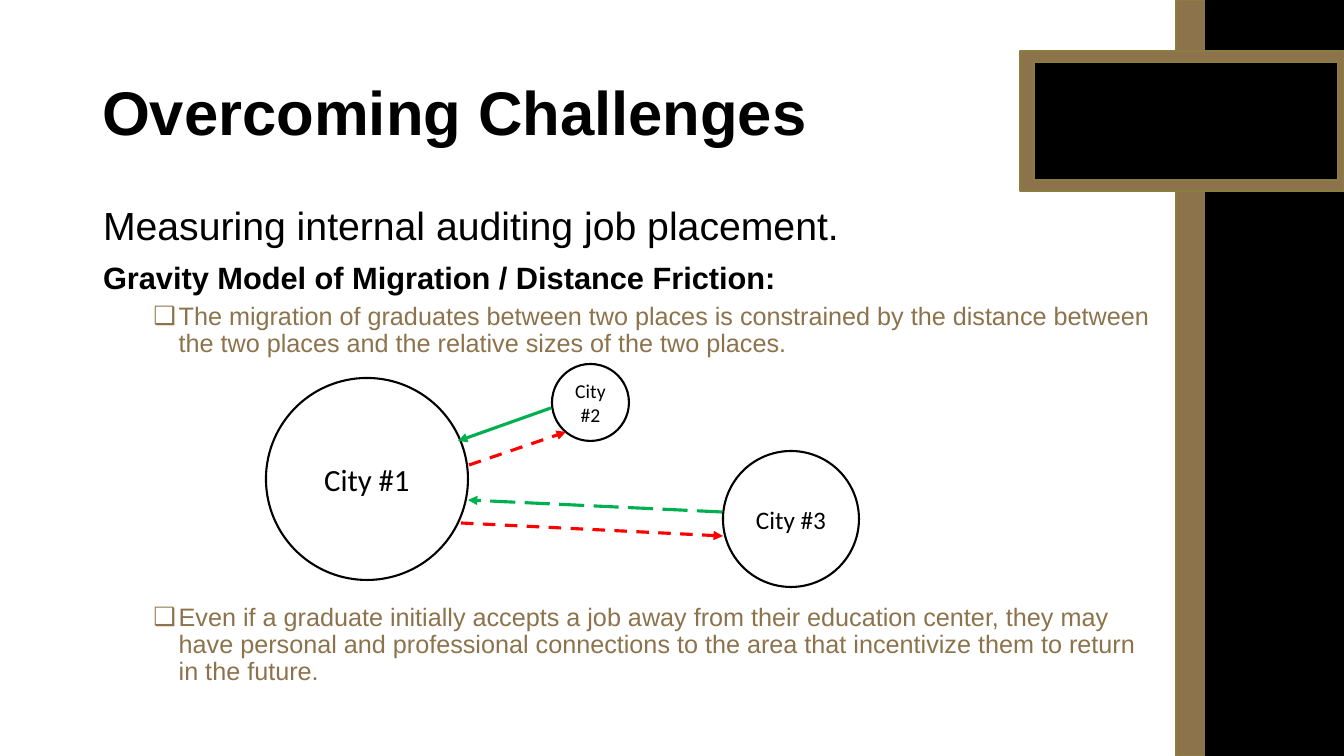
from lxml import etree
from pptx import Presentation
from pptx import util as u
from pptx.dml.color import RGBColor
from pptx.enum import dml, shapes, text
from pptx.oxml.ns import qn

PX = u.Inches(1) / 100.8
BLACK, WHITE, GOLD, OLIVE = "000000", "FFFFFF", "8D734B", "897E3F"
GREEN, RED = "00B050", "FF0000"
SOLID, DASH, LONG_DASH = (
    dml.MSO_LINE.SOLID, dml.MSO_LINE.DASH, dml.MSO_LINE.LONG_DASH)

PANELS = [
    (1176, 0, 30, 756, GOLD, OLIVE),
    (1206, 0, 138, 756, BLACK, BLACK),
    (1020, 51, 324, 140, GOLD, OLIVE),
    (1034, 62, 304, 118, BLACK, OLIVE),
]
HEADINGS = [
    ("Measuring internal auditing job placement.", 28, False, 0),
    ("Gravity Model of Migration / Distance Friction:", 22, True, 10),
]
BULLETS = [
    ("The migration of graduates between two places is constrained by the "
     "distance between the two places and the relative sizes of the two "
     "places.", 5),
    ("Even if a graduate initially accepts a job away from their education "
     "center, they may have personal and professional connections to the "
     "area that incentivize them to return in the future.", 176),
]
CITIES = [
    ("City #1", 0, 14, 202, 22),
    ("City #3", 457, 87, 136, 18),
    ("City #2", 286, 0, 77, 14),
]
FLOWS = [
    (285, 44, 192, 77, GREEN, SOLID),
    (456, 148, 202, 136, GREEN, LONG_DASH),
    (203, 101, 300, 68, RED, DASH),
    (195, 159, 457, 172, RED, DASH),
]


def px(*lengths):
    return [u.Emu(round(length * PX)) for length in lengths]


def color(hex_string):
    return RGBColor.from_string(hex_string)


def set_attributes(target, values):
    for name, value in values.items():
        setattr(target, name, value)


def place(shape, box):
    set_attributes(shape, dict(zip(("left", "top", "width", "height"), px(*box))))


def format_font(font, size, hex_string, name="Arial", bold=False):
    set_attributes(font, {"size": u.Pt(size), "name": name, "bold": bold})
    font.color.rgb = color(hex_string)


def add_filled(slide, kind, box, fill, line, width):
    shape = slide.shapes.add_shape(kind, *px(*box))
    shape.shadow.inherit = False
    shape.fill.solid()
    shape.fill.fore_color.rgb = color(fill)
    shape.line.color.rgb = color(line)
    shape.line.width = u.Pt(width)
    return shape


def add_panels(slide, panels):
    for *box, fill, line in panels:
        add_filled(slide, shapes.MSO_SHAPE.RECTANGLE, box, fill, line, 1)


def fill_title(title, box):
    place(title, box)
    frame = title.text_frame
    set_attributes(frame, {"vertical_anchor": text.MSO_ANCHOR.MIDDLE,
                           "auto_size": text.MSO_AUTO_SIZE.NONE})
    frame.text = "Overcoming Challenges"
    paragraph = frame.paragraphs[0]
    set_attributes(paragraph, {"alignment": text.PP_ALIGN.LEFT,
                               "line_spacing": 0.9})
    format_font(paragraph.font, 44, BLACK, bold=True)


def set_bullet(paragraph, character, margin, indent):
    properties = paragraph._p.get_or_add_pPr()
    properties.set("marL", str(u.Inches(margin)))
    properties.set("indent", str(u.Inches(indent)))
    if character:
        etree.SubElement(properties, qn("a:buFont"), typeface="Arial")
        etree.SubElement(properties, qn("a:buChar"), char=character)
    else:
        etree.SubElement(properties, qn("a:buNone"))


def fill_body(body, box):
    place(body, box)
    frame = body.text_frame
    frame.auto_size = text.MSO_AUTO_SIZE.NONE
    rows = [(words, size, bold, gap, BLACK, 0, None, 0, 0)
            for words, size, bold, gap in HEADINGS]
    rows += [(words, 18, False, gap, GOLD, 1, "❑", 0.75, -0.25)
             for words, gap in BULLETS]
    frame.text = "\n".join(row[0] for row in rows)
    for paragraph, row in zip(frame.paragraphs, rows):
        _, size, bold, gap, ink, level, *bullet = row
        set_attributes(paragraph, {"level": level, "line_spacing": 0.9,
                                   "space_before": u.Pt(gap),
                                   "space_after": u.Pt(0)})
        set_bullet(paragraph, *bullet)
        format_font(paragraph.font, size, ink, bold=bold)


def add_city(slide, name, box, size):
    city = add_filled(slide, shapes.MSO_SHAPE.OVAL, box, WHITE, BLACK, 1.5)
    frame = city.text_frame
    set_attributes(frame, {"word_wrap": True,
                           "vertical_anchor": text.MSO_ANCHOR.MIDDLE})
    frame.text = name
    paragraph = frame.paragraphs[0]
    paragraph.alignment = text.PP_ALIGN.CENTER
    format_font(paragraph.font, size, BLACK, "Calibri")


def add_flow(slide, ends, ink, dash):
    flow = slide.shapes.add_connector(shapes.MSO_CONNECTOR.STRAIGHT, *px(*ends))
    flow.line.color.rgb = color(ink)
    set_attributes(flow.line, {"width": u.Pt(2.25), "dash_style": dash})
    properties = flow._element.spPr
    etree.SubElement(properties.find(qn("a:ln")), qn("a:tailEnd"), type="triangle")
    etree.SubElement(properties, qn("a:effectLst"))


def add_migration_diagram(slide, left, top):
    for name, x, y, diameter, size in CITIES:
        add_city(slide, name, (left + x, top + y, diameter, diameter), size)
    for x1, y1, x2, y2, ink, dash in FLOWS:
        ends = (left + x1, top + y1, left + x2, top + y2)
        add_flow(slide, ends, ink, dash)


def main():
    presentation = Presentation()
    width, height = px(1344, 756)
    set_attributes(presentation, {"slide_width": width, "slide_height": height})
    slide = presentation.slides.add_slide(presentation.slide_layouts[1])
    add_panels(slide, PANELS)
    fill_title(slide.shapes.title, (92, 43, 921, 146))
    fill_body(slide.placeholders[1], (93, 202, 1072, 480))
    add_migration_diagram(slide, 266, 364)
    presentation.save("out.pptx")


if __name__ == "__main__":
    main()
